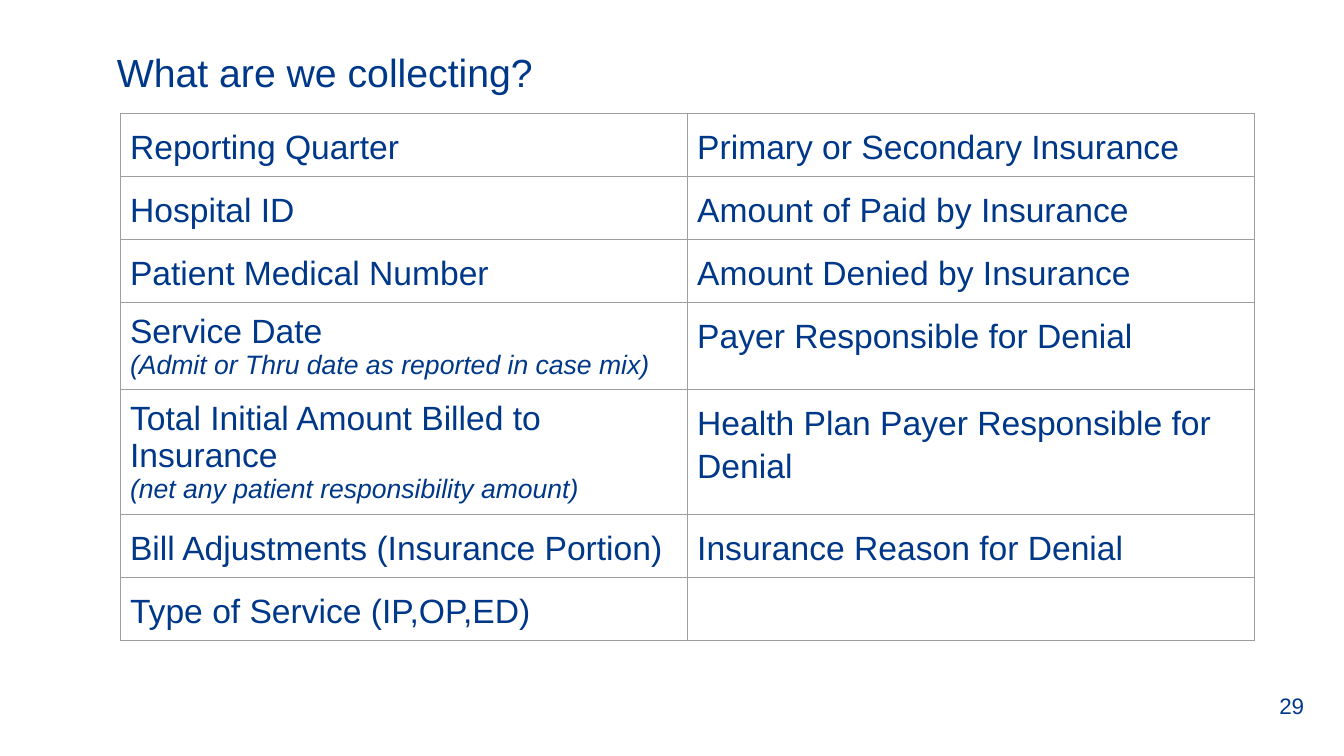
import pptx
import pptx.util
import pptx.dml.color
import pptx.enum.text
import pptx.oxml
import pptx.oxml.ns

PX = 9144  # 100 px to the inch

THEME = {
    "font": "Arial",
    "text": "003889",
    "border": "9E9E9E",
    "border_width": 9525,
    "title": 28,
    "body": 24,
    "detail": 19,
    "number": 16,
}


def write(paragraph, text, size, italic=False, spacing=None):
    paragraph.text = text
    paragraph.alignment = pptx.enum.text.PP_ALIGN.LEFT
    paragraph.line_spacing = spacing
    font = paragraph.font
    font.name = THEME["font"]
    font.size = pptx.util.Pt(size)
    font.italic = italic
    font.color.rgb = pptx.dml.color.RGBColor.from_string(THEME["text"])


def add_borders(cell):
    properties = cell._tc.get_or_add_tcPr()
    for side in ("lnL", "lnR", "lnT", "lnB"):
        properties.append(pptx.oxml.parse_xml(
            f'<a:{side} {pptx.oxml.ns.nsdecls("a")} w="{THEME["border_width"]}">'
            f'<a:solidFill><a:srgbClr val="{THEME["border"]}"/></a:solidFill></a:{side}>'))


presentation = pptx.Presentation()
presentation.slide_width = 1333 * PX
presentation.slide_height = 750 * PX
slide = presentation.slides.add_slide(presentation.slide_layouts[5])

# Title
title = slide.shapes.title
title.left, title.top, title.width, title.height = 106 * PX, 38 * PX, 1150 * PX, 66 * PX
title.text_frame.auto_size = pptx.enum.text.MSO_AUTO_SIZE.NONE
title.text_frame.vertical_anchor = pptx.enum.text.MSO_ANCHOR.MIDDLE
write(title.text_frame.paragraphs[0], "What are we collecting?", THEME["title"])

# Collected fields: left cell, its detail, right cell, row height
rows = [
    ("Reporting Quarter", "", "Primary or Secondary Insurance", 62),
    ("Hospital ID", "", "Amount of Paid by Insurance", 62),
    ("Patient Medical Number", "", "Amount Denied by Insurance", 62),
    ("Service Date", "(Admit or Thru date as reported in case mix)",
     "Payer Responsible for Denial", 86),
    ("Total Initial Amount Billed to Insurance", "(net any patient responsibility amount)",
     "Health Plan Payer Responsible for Denial", 124),
    ("Bill Adjustments (Insurance Portion)", "", "Insurance Reason for Denial", 62),
    ("Type of Service (IP,OP,ED)", "", "", 62),
]
table_height = sum(row[3] for row in rows)
table = slide.shapes.add_table(
    len(rows), 2, 119 * PX, 113 * PX, 1125 * PX, table_height * PX).table
table.first_row = False
table.horz_banding = False

for row_index, (left_text, detail, right_text, height) in enumerate(rows):
    table.rows[row_index].height = height * PX
    for column_index, text in enumerate((left_text, right_text)):
        cell = table.cell(row_index, column_index)
        cell.margin_left = cell.margin_right = 10 * PX
        cell.margin_top = cell.margin_bottom = 10 * PX
        add_borders(cell)
        cell.fill.background()
        has_detail = column_index == 0 and detail
        write(cell.text_frame.paragraphs[0], text, THEME["body"],
              spacing=None if has_detail else 1.14)
        if has_detail:
            write(cell.text_frame.add_paragraph(), detail, THEME["detail"], italic=True)

# Slide number
number = slide.shapes.add_textbox(1259 * PX, 680 * PX, 63 * PX, 40 * PX)
number.text_frame.word_wrap = True
number.text_frame.vertical_anchor = pptx.enum.text.MSO_ANCHOR.MIDDLE
write(number.text_frame.paragraphs[0], "29", THEME["number"])

presentation.save("out.pptx")
